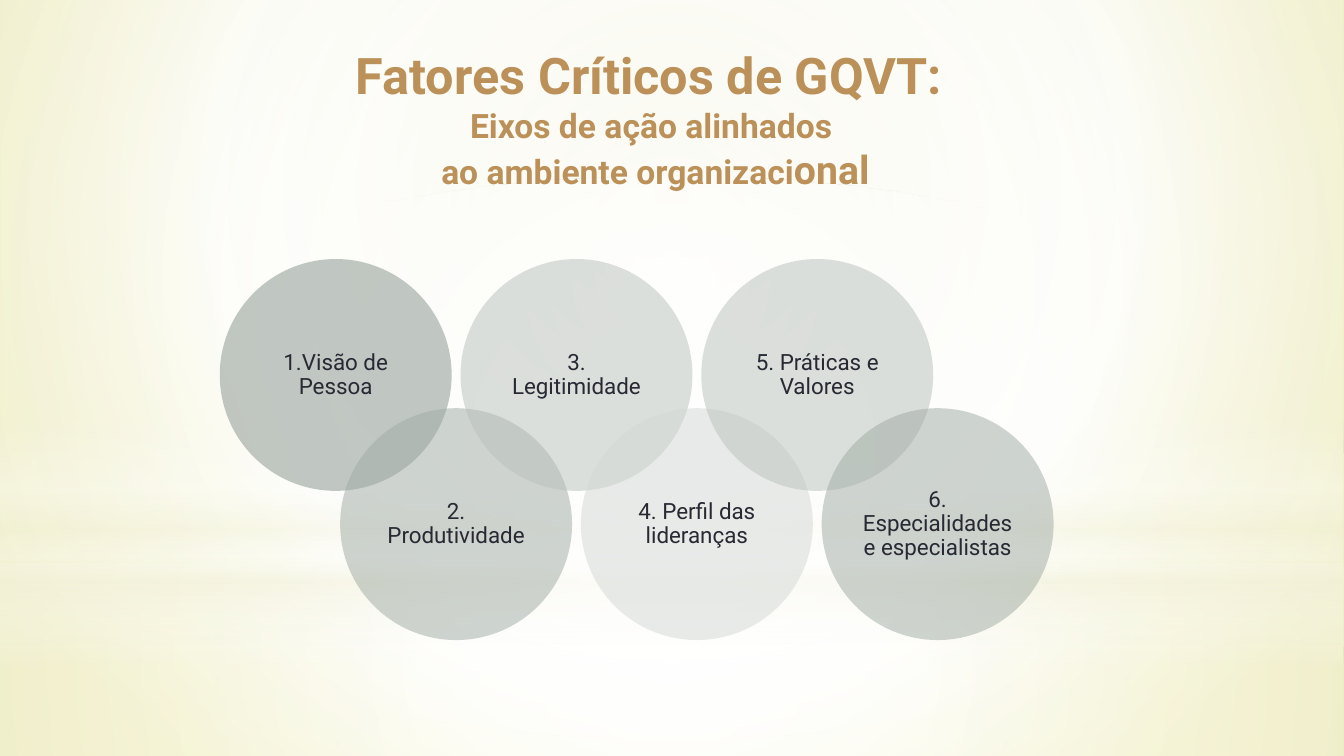
from dataclasses import dataclass

from lxml import etree
from pptx import Presentation, util as u
from pptx.dml.color import RGBColor
from pptx.enum import shapes, text
from pptx.oxml.ns import nsdecls, qn

# Content
TITLE_LINES = [
    [("Fatores Críticos de GQVT: ", "title")],
    [("Eixos de ação alinhados ", "subtitle")],
    [("ao ambiente organizaci", "subtitle"), ("onal", "ending")],
]
FACTORS = [
    ("1.Visão de Pessoa", "85938B"),
    ("2. Produtividade", "9FAAA3"),
    ("3. Legitimidade", "B9C1BC"),
    ("4. Perfil das lideranças", "D3D8D5"),
    ("5. Práticas e Valores", "B9C1BC"),
    ("6. Especialidades e especialistas", "9FAAA3"),
]


@dataclass(frozen=True)
class Theme:
    font: str = "Roboto"
    gold: str = "BB9159"
    ink: str = "292934"
    white: str = "FFFFFF"
    cream: str = "F3F2DC"
    title: int = 36
    ending: int = 28
    subtitle: int = 24
    factor: int = 16


THEME = Theme()
WIDTH, HEIGHT = 13.33, 7.5
HORIZON = 5.58
CENTRE = (50, 50, 50, 50)

# Backdrop: stops are (position %, colour, opacity %); focus None is a vertical fade
BACKGROUND = [(0, "EFEDCC", 100), (60, THEME.white, 100), (100, "E9E58A", 100)]
RECT, OVAL = shapes.MSO_SHAPE.RECTANGLE, shapes.MSO_SHAPE.OVAL
BACKDROP = [
    (RECT, HORIZON, HEIGHT - HORIZON, CENTRE,
     [(0, THEME.white, 91), (37, THEME.white, 76), (100, THEME.cream, 79)]),
    (RECT, 0, HORIZON, CENTRE,
     [(0, THEME.white, 89), (48, THEME.white, 62), (100, THEME.cream, 79)]),
    (RECT, 4.12, 2.5, None,
     [(0, THEME.white, 0), (29, THEME.white, 30), (45, THEME.cream, 40),
      (55, THEME.white, 26), (65, THEME.cream, 60), (100, THEME.white, 0)]),
    (OVAL, 1.75, HORIZON, CENTRE, [(0, THEME.white, 100), (56, THEME.white, 0)]),
]


def set_gradient(holder, stops, focus):
    """Swap the solid fill of a properties element for a gradient."""
    stop_xml = "".join(
        f'<a:gs pos="{pos * 1000}"><a:srgbClr val="{color}">'
        f'<a:alpha val="{opacity * 1000}"/></a:srgbClr></a:gs>'
        for pos, color, opacity in stops)
    if focus:
        edges = " ".join(f'{side}="{share * 1000}"' for side, share in zip("ltrb", focus))
        direction = f'<a:path path="circle"><a:fillToRect {edges}/></a:path>'
    else:
        direction = '<a:lin ang="5400000" scaled="0"/>'
    gradient = etree.fromstring(
        f'<a:gradFill {nsdecls("a")} rotWithShape="1"><a:gsLst>{stop_xml}</a:gsLst>'
        f'{direction}</a:gradFill>')
    holder.replace(holder.find(qn("a:solidFill")), gradient)


def add_plain_shape(slide, kind, left, top, width, height, color):
    shape = slide.shapes.add_shape(kind, *map(u.Inches, (left, top, width, height)))
    shape.shadow.inherit = False
    shape.line.fill.background()
    shape.fill.solid()
    shape.fill.fore_color.rgb = RGBColor.from_string(color)
    return shape


def style_font(font, size, color, bold=False):
    font.name, font.size, font.bold = THEME.font, u.Pt(size), bold
    font.color.rgb = RGBColor.from_string(color)


def add_backdrop(slide):
    slide.background.fill.solid()
    set_gradient(slide.element.find(".//" + qn("p:bgPr")), BACKGROUND, (20, 10, 20, 60))
    for kind, top, height, focus, stops in BACKDROP:
        layer = add_plain_shape(slide, kind, 0, top, WIDTH, height, THEME.white)
        set_gradient(layer.element.spPr, stops, focus)


def add_factors(slide):
    # Overlapping circles alternate between two rows
    left, row_tops, step, diameter = 2.18, (2.57, 4.05), 1.194, 2.3
    for i, (label, color) in enumerate(FACTORS):
        circle = add_plain_shape(slide, OVAL, left + i * step, row_tops[i % 2],
                                 diameter, diameter, color)
        tint = circle.element.spPr.find(qn("a:solidFill"))[0]
        etree.SubElement(tint, qn("a:alpha")).set("val", "50000")
        frame = circle.text_frame
        frame.word_wrap = True
        frame.vertical_anchor = text.MSO_ANCHOR.MIDDLE
        frame.margin_left = frame.margin_right = u.Inches(0.07)
        frame.margin_top = frame.margin_bottom = u.Inches(0.07)
        frame.text = label
        paragraph = frame.paragraphs[0]
        paragraph.alignment = text.PP_ALIGN.CENTER
        paragraph.line_spacing = 0.9
        style_font(paragraph.runs[0].font, THEME.factor, THEME.ink)


def add_title(slide):
    heading = slide.shapes.add_textbox(*map(u.Inches, (2.02, 0.44, 8.96, 1.47)))
    frame = heading.text_frame
    frame.word_wrap = True
    frame.vertical_anchor = text.MSO_ANCHOR.MIDDLE
    for i, line in enumerate(TITLE_LINES):
        paragraph = frame.add_paragraph() if i else frame.paragraphs[0]
        paragraph.alignment = text.PP_ALIGN.CENTER
        for words, role in line:
            run = paragraph.add_run()
            run.text = words
            style_font(run.font, getattr(THEME, role), THEME.gold, bold=True)


def main():
    deck = Presentation()
    deck.slide_width, deck.slide_height = u.Inches(WIDTH), u.Inches(HEIGHT)
    slide = deck.slides.add_slide(deck.slide_layouts[6])
    add_backdrop(slide)
    add_factors(slide)
    add_title(slide)
    deck.save("out.pptx")


if __name__ == "__main__":
    main()
